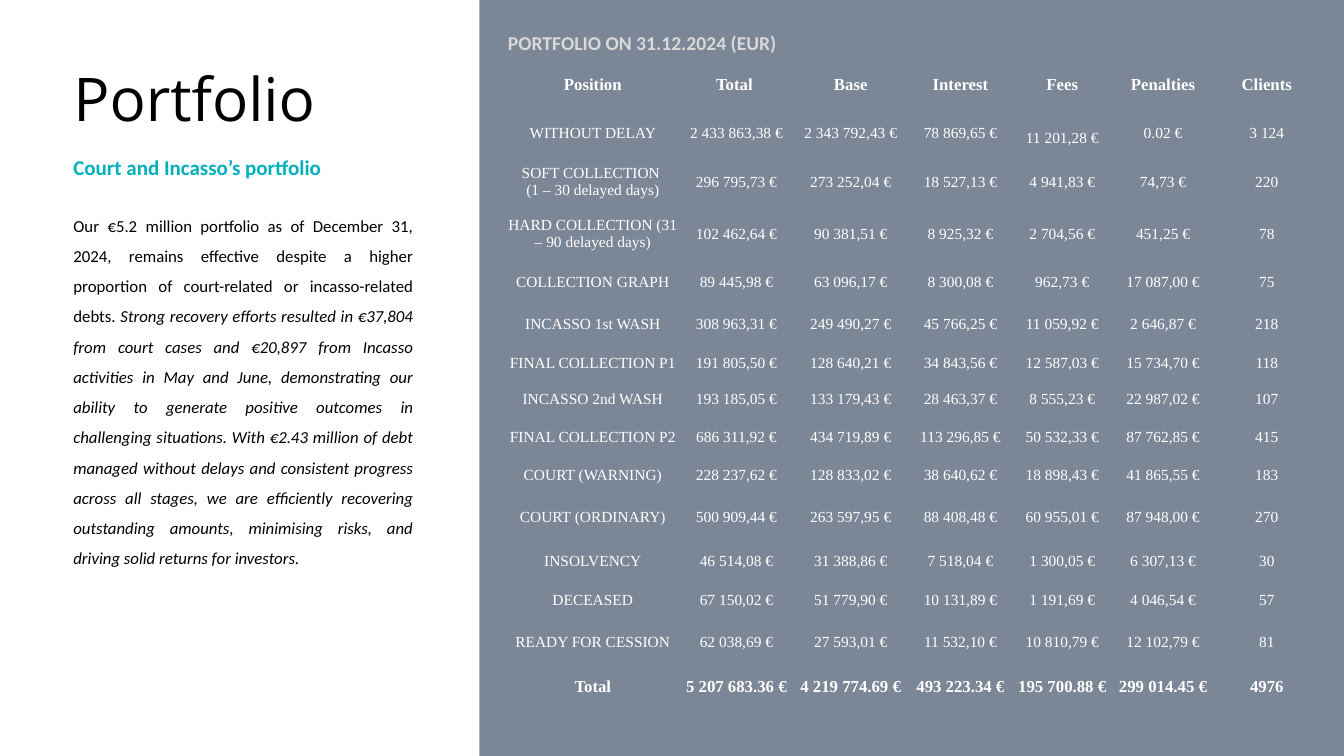
import pptx
import pptx.dml.color
import pptx.enum.shapes
import pptx.enum.text
import pptx.oxml
import pptx.util
from pptx.dml.color import RGBColor
from pptx.util import Cm

SLATE = RGBColor(0x44, 0x54, 0x6A)
TEAL = RGBColor(0x00, 0xB0, 0xBC)
LIGHT_GREY = RGBColor(0xD9, 0xD9, 0xD9)
WHITE = RGBColor(0xFF, 0xFF, 0xFF)
BLACK = RGBColor(0x00, 0x00, 0x00)

ALIGN = pptx.enum.text.PP_ALIGN
MIDDLE = pptx.enum.text.MSO_ANCHOR.MIDDLE
NO_STYLE_NO_GRID = "{2D5ABB26-0587-4C30-8999-92F81FD0307C}"

PORTFOLIO_HEADING = "PORTFOLIO ON 31.12.2024 (EUR)"
PORTFOLIO = [
    ("Position", "Total ", "Base", "Interest", "Fees", "Penalties", "Clients"),
    ("WITHOUT DELAY", "2 433 863,38 €", "2 343 792,43 €", "78 869,65 €", "11 201,28 €", "0.02 €", "3 124"),
    ("SOFT COLLECTION \n(1 – 30 delayed days)", "296 795,73 €", "273 252,04 €", "18 527,13 €", "4 941,83 €",
     "74,73 €", "220"),
    ("HARD COLLECTION (31 – 90 delayed days)", "102 462,64 €", "90 381,51 €", "8 925,32 €", "2 704,56 €",
     "451,25 €", "78"),
    ("COLLECTION GRAPH", "89 445,98 €", "63 096,17 €", "8 300,08 €", "962,73 €", "17 087,00 €", "75"),
    ("INCASSO 1st WASH", "308 963,31 €", "249 490,27 €", "45 766,25 €", "11 059,92 €", "2 646,87 €", "218"),
    ("FINAL COLLECTION P1", "191 805,50 €", "128 640,21 €", "34 843,56 €", "12 587,03 €", "15 734,70 €", "118"),
    ("INCASSO 2nd WASH", "193 185,05 €", "133 179,43 €", "28 463,37 €", "8 555,23 €", "22 987,02 €", "107"),
    ("FINAL COLLECTION P2", "686 311,92 €", "434 719,89 €", "113 296,85 €", "50 532,33 €", "87 762,85 €", "415"),
    ("COURT (WARNING)", "228 237,62 €", "128 833,02 €", "38 640,62 €", "18 898,43 €", "41 865,55 €", "183"),
    ("COURT (ORDINARY)", "500 909,44 €", "263 597,95 €", "88 408,48 €", "60 955,01 €", "87 948,00 €", "270"),
    ("INSOLVENCY", "46 514,08 €", "31 388,86 €", "7 518,04 €", "1 300,05 €", "6 307,13 €", "30"),
    ("DECEASED", "67 150,02 €", "51 779,90 €", "10 131,89 €", "1 191,69 €", "4 046,54 €", "57"),
    ("READY FOR CESSION", "62 038,69 €", "27 593,01 €", "11 532,10 €", "10 810,79 €", "12 102,79 €", "81"),
    ("Total", "5 207 683.36 €", "4 219 774.69 €", "493 223.34 €", "195 700.88 €", "299 014.45 €", "4976"),
]
COLUMN_WIDTHS = (4.32, 2.92, 2.84, 2.69, 2.44, 2.64, 2.59)
ROW_HEIGHTS = (0.69, 1.35, 1.12, 1.32, 1.3, 1.14, 0.99, 0.94, 0.89, 1.04, 0.86, 1.27, 0.94, 1.02, 1.07, 1.22)

SUMMARY = [
    ("Our €5.2 million portfolio as of December 31, 2024, remains effective despite a higher proportion of "
     "court-related or incasso-related debts. ", False),
    ("Strong recovery efforts resulted in €37,804 from court cases and €20,897 from Incasso activities in May "
     "and June, demonstrating our ability to generate positive outcomes in challenging situations. With €2.43 "
     "million of debt managed without delays and consistent progress across all stages, we are efficiently "
     "recovering outstanding amounts, minimising risks, and driving solid returns for investors.", True),
]


def style_paragraph(para, name, size, color, bold=False, align=ALIGN.LEFT):
    para.alignment = align
    para.font.name = name
    para.font.size = pptx.util.Pt(size)
    para.font.color.rgb = color
    para.font.bold = bold


def add_panel(page, left, top, width, height):
    """Place the translucent slate panel behind the table."""
    panel = page.shapes.add_shape(pptx.enum.shapes.MSO_SHAPE.RECTANGLE, left, top, width, height)
    panel.shadow.inherit = False
    panel.line.fill.background()
    panel.fill.solid()
    panel.fill.fore_color.rgb = SLATE
    color = panel.fill._xPr.find(".//" + pptx.oxml.ns.qn("a:srgbClr"))
    pptx.oxml.xmlchemy.OxmlElement("a:alpha")
    alpha = color.makeelement(pptx.oxml.ns.qn("a:alpha"), {"val": "70000"})
    color.append(alpha)


def add_title(page, left, top, width, height):
    frame = page.shapes.add_textbox(left, top, width, height).text_frame
    frame.word_wrap = True
    frame.vertical_anchor = MIDDLE
    para = frame.paragraphs[0]
    para.text = "Portfolio"
    para.line_spacing = 0.9
    style_paragraph(para, "Open Sans", 43, BLACK)


def add_summary(page, left, top, width, height):
    frame = page.shapes.add_textbox(left, top, width, height).text_frame
    frame.word_wrap = True
    subtitle = frame.paragraphs[0]
    subtitle.text = "Court and Incasso’s portfolio"
    style_paragraph(subtitle, "Calibri", 15, TEAL, True, ALIGN.JUSTIFY)
    body = frame.add_paragraph()
    body.line_spacing = 1.5
    body.space_before = pptx.util.Pt(18)
    style_paragraph(body, "Calibri", 12, BLACK, align=ALIGN.JUSTIFY)
    for words, italic in SUMMARY:
        span = body.add_run()
        span.text = words
        span.font.italic = italic


def fill_cell(cell, words, **style):
    cell.fill.background()
    cell.vertical_anchor = MIDDLE
    cell.margin_left = cell.margin_right = cell.margin_top = Cm(0.02)
    cell.margin_bottom = 0
    cell.text = words
    for para in cell.text_frame.paragraphs:
        style_paragraph(para, **style)


def add_portfolio_table(page, left, top, width, height):
    frame = page.shapes.add_table(len(ROW_HEIGHTS), len(COLUMN_WIDTHS), left, top, width, height)
    table = frame.table
    table.first_row = table.horz_banding = False
    table._tbl.tblPr.find(pptx.oxml.ns.qn("a:tableStyleId")).text = NO_STYLE_NO_GRID
    for column, size in zip(table.columns, COLUMN_WIDTHS):
        column.width = Cm(size)
    for row, size in zip(table.rows, ROW_HEIGHTS):
        row.height = Cm(size)

    heading = table.cell(0, 0)
    heading.merge(table.cell(0, len(COLUMN_WIDTHS) - 1))
    fill_cell(heading, PORTFOLIO_HEADING, name="Calibri", size=14, color=LIGHT_GREY, bold=True)
    for row, values in enumerate(PORTFOLIO, start=1):
        strong = row in (1, len(PORTFOLIO))
        for column, words in enumerate(values):
            fill_cell(table.cell(row, column), words, name="Times New Roman", size=12 if strong else 11,
                      color=WHITE, bold=strong, align=ALIGN.CENTER)
    undelayed_fees = table.cell(2, 4)
    undelayed_fees.text_frame.paragraphs[0].line_spacing = 1.5


def main():
    deck = pptx.Presentation()
    deck.slide_width, deck.slide_height = Cm(33.87), Cm(19.05)
    page = deck.slides.add_slide(deck.slide_layouts[6])
    panel_left = Cm(12.08)
    add_panel(page, panel_left, 0, deck.slide_width - panel_left, deck.slide_height)
    add_title(page, Cm(1.6), Cm(0.74), Cm(29.21), Cm(3.68))
    add_portfolio_table(page, Cm(12.78), Cm(0.76), Cm(20.42), Cm(17.09))
    add_summary(page, Cm(1.6), Cm(3.78), Cm(9.07), Cm(10.69))
    deck.save("out.pptx")


if __name__ == "__main__":
    main()
